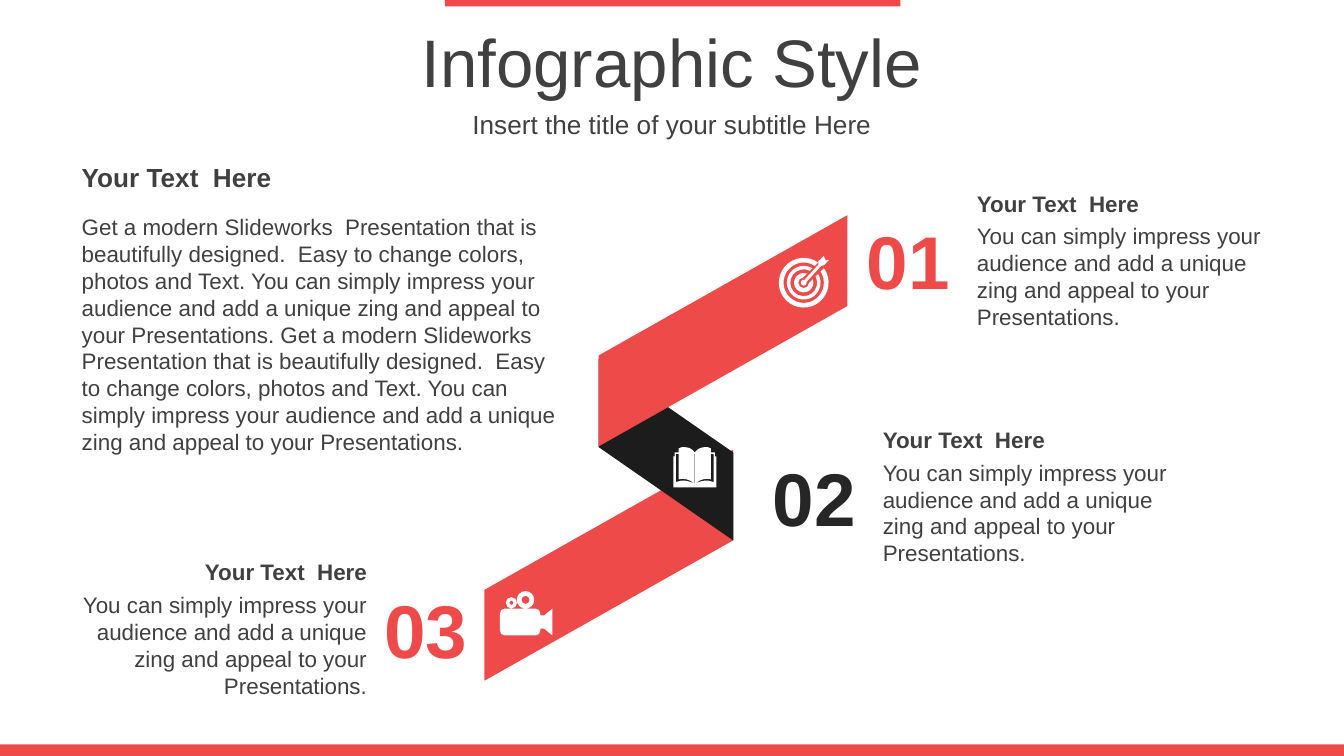
from math import asin, ceil, cos, degrees, radians, sin, tan

from pptx import Presentation
from pptx.dml.color import RGBColor
from pptx.enum.shapes import MSO_SHAPE
from pptx.enum.text import MSO_ANCHOR, PP_ALIGN
from pptx.oxml.xmlchemy import OxmlElement
from pptx.util import Inches, Pt

RECTANGLE, PARALLELOGRAM = MSO_SHAPE.RECTANGLE, MSO_SHAPE.PARALLELOGRAM
LEFT, CENTER, RIGHT = PP_ALIGN.LEFT, PP_ALIGN.CENTER, PP_ALIGN.RIGHT
MIDDLE = MSO_ANCHOR.MIDDLE

WIDTH, HEIGHT = Inches(10), Inches(5.625)
ICON_UNIT = WIDTH // 1000
COLORS = {"red": "EF4A4A", "black": "1C1C1C", "number": "262626",
          "text": "404040", "white": "FFFFFF"}

HEADING = "Your Text  Here"
PITCH = ("You can simply impress your audience and add a unique zing "
         "and appeal to your Presentations.")
OFFER = ("Get a modern Slideworks  Presentation that is beautifully designed.  "
         "Easy to change colors, photos and Text. ")

# number, left and top in percent, colour, side on which its text stands
STEPS = [
    ("02", 56.5, 58.8, "number", RIGHT),
    ("01", 63.5, 27.55, "red", RIGHT),
    ("03", 27.6, 76.3, "red", LEFT),
]


def color(name):
    return RGBColor.from_string(COLORS[name])


def place(left, top, width, height):
    """Turn percentages of the slide into lengths."""
    return (int(WIDTH * left / 100), int(HEIGHT * top / 100),
            int(WIDTH * width / 100), int(HEIGHT * height / 100))


def paint(shape, fill):
    shape.shadow.inherit = False
    shape.fill.solid()
    shape.fill.fore_color.rgb = color(fill)
    shape.line.fill.background()


def add_bar(page, *area):
    paint(page.shapes.add_shape(RECTANGLE, *place(*area)), "red")


def add_ribbon(page, area, fill, slant, rotation, flips):
    ribbon = page.shapes.add_shape(PARALLELOGRAM, *place(*area))
    ribbon.adjustments[0] = slant
    ribbon.rotation = rotation
    for flip in flips:
        ribbon._element.spPr.xfrm.set(flip, "1")
    paint(ribbon, fill)


def add_text(page, area, text, size, fill="text", align=LEFT, bold=False, wrap=True):
    box = page.shapes.add_textbox(*place(*area))
    frame = box.text_frame
    frame.word_wrap = wrap
    frame.vertical_anchor = MIDDLE
    para = frame.paragraphs[0]
    para.text = text
    para.alignment = align
    para.font.name = "Arial"
    para.font.size = Pt(size)
    para.font.bold = bold
    para.font.color.rgb = color(fill)


def add_step(page, number, left, top, fill, side):
    add_text(page, (left, top, 8.3, 13.7), number, 40, fill, bold=True, wrap=False)
    text_left = left + 8.2 if side == RIGHT else left - 22.8
    align = LEFT if side == RIGHT else RIGHT
    add_text(page, (text_left, top + 0.9, 23.5, 16.2), PITCH, 12, align=align)
    add_text(page, (text_left, top - 3.3, 23.5, 5.3), HEADING, 12, align=align, bold=True)


def lines(*points):
    return [[point] for point in points]


def arc(x, y, radius, start=0, end=360):
    """Line to the start of an arc, then one Bezier curve per quarter turn or less."""
    count = ceil(abs(end - start) / 90)
    step = radians(end - start) / count
    pull = 4 / 3 * tan(step / 4)

    def point(angle, along=0):
        return (x + radius * (cos(angle) - along * sin(angle)),
                y + radius * (sin(angle) + along * cos(angle)))

    angles = [radians(start) + step * i for i in range(count + 1)]
    curves = [[point(a, pull), point(b, -pull), point(b)]
              for a, b in zip(angles, angles[1:])]
    return [[point(angles[0])]] + curves


def add_icon(page, left, top, contours):
    """Draw contours, in thousandths of the slide width, from an origin in percent.

    A contour lists segments: one point for a line, three for a curve.
    """
    x0, y0 = WIDTH * left / 100, HEIGHT * top / 100
    builder = None
    for segments in contours:
        points = [(x0 + x * ICON_UNIT, y0 + y * ICON_UNIT)
                  for segment in segments for x, y in segment]
        if builder is None:
            builder = page.shapes.build_freeform(*points[0])
        else:
            builder.move_to(*points[0])
        builder.add_line_segments(points[1:], close=True)
    icon = builder.convert_to_shape()
    steps = iter(icon._element.xpath(".//a:lnTo"))
    for segments in contours:
        for segment in segments[1:]:
            group = [next(steps) for _ in segment]
            if len(group) == 3:
                curve = OxmlElement("a:cubicBezTo")
                group[0].addprevious(curve)
                for step in group:
                    curve.append(step[0])
                    step.getparent().remove(step)
    paint(icon, "white")


def target_contours():
    def open_ring(outer, inner):
        """Ring with a slit of constant width towards the upper right."""
        wide, narrow = (degrees(asin(3 / radius)) for radius in (outer, inner))
        return (arc(0, 0, outer, wide - 45, 315 - wide)
                + arc(0, 0, inner, 315 - narrow, narrow - 45))

    dart = arc(0, 0, 2.2, -15, 285) + lines(
        (11, -13.5), (11, -16), (15, -20), (16, -17), (19, -17), (15, -13), (13, -12.5))
    return [open_ring(18.5, 15), open_ring(12.5, 10), open_ring(7.2, 4), dart]


def book_contours():
    def mirror(segments):
        return [[(-x, y) for x, y in segment] for segment in segments]

    half = [[(0, 4)], [(-2, 1), (-5, 0), (-8, 0)], [(-9, 0), (-11, 0), (-12, 1)],
            *lines((-12, 4), (-15, 4), (-15, 7), (-16, 7), (-16, 30), (0, 30))]
    cut = [*lines((-14, 5), (-12, 5), (-12, 24)), [(-8, 23), (-4, 24), (-0.5, 27)],
           [(-5, 25), (-9, 24), (-14, 26)]]
    spine = lines((-0.3, 5), (0.3, 5), (0.3, 27), (-0.3, 27))
    return [half, mirror(half), cut, mirror(cut), spine]


def camera_contours():
    corner = 3.5
    body = (arc(corner, 16.5, corner, 180, 270) + arc(26.5, 16.5, corner, 270, 360)
            + lines((30, 18), (33, 18), (39, 13), (39, 33), (33, 28), (30, 28))
            + arc(26.5, 29.5, corner, 0, 90) + arc(corner, 29.5, corner, 90, 180))
    return [body, arc(8.5, 8.7, 4.2), arc(8.5, 8.7, 1.5),
            arc(19, 6.5, 6.5), arc(19, 6.5, 3)]


def main():
    deck = Presentation()
    deck.slide_width, deck.slide_height = WIDTH, HEIGHT
    page = deck.slides.add_slide(deck.slide_layouts[6])

    add_bar(page, 33.1, 0, 33.9, 0.85)
    add_bar(page, 0, 98.45, 100, 1.55)
    add_text(page, (0, 2.4, 100, 11.2), "Infographic Style", 36, align=CENTER)
    add_text(page, (0, 13.7, 100, 5.5), "Insert the title of your subtitle Here", 14,
             align=CENTER)

    add_ribbon(page, (36.7, 58.3, 17.2, 32.9), "red", 0.607, 270, ["flipH"])
    add_ribbon(page, (42.8, 50.6, 13.5, 17.8), "black", 0.694, 90, ["flipH", "flipV"])
    add_ribbon(page, (45.2, 27.3, 17.2, 32.9), "red", 0.607, 270, ["flipH"])

    for step in STEPS:
        add_step(page, *step)
    add_text(page, (5.1, 27.15, 38.3, 34.1), f"{OFFER}{PITCH} {OFFER}{PITCH}", 12)
    add_text(page, (5.1, 20.4, 38.3, 6), HEADING, 14, bold=True)

    add_icon(page, 51.7, 59.15, book_contours())
    add_icon(page, 59.8, 37.4, target_contours())
    add_icon(page, 37.2, 78.2, camera_contours())
    deck.save("out.pptx")


if __name__ == "__main__":
    main()
